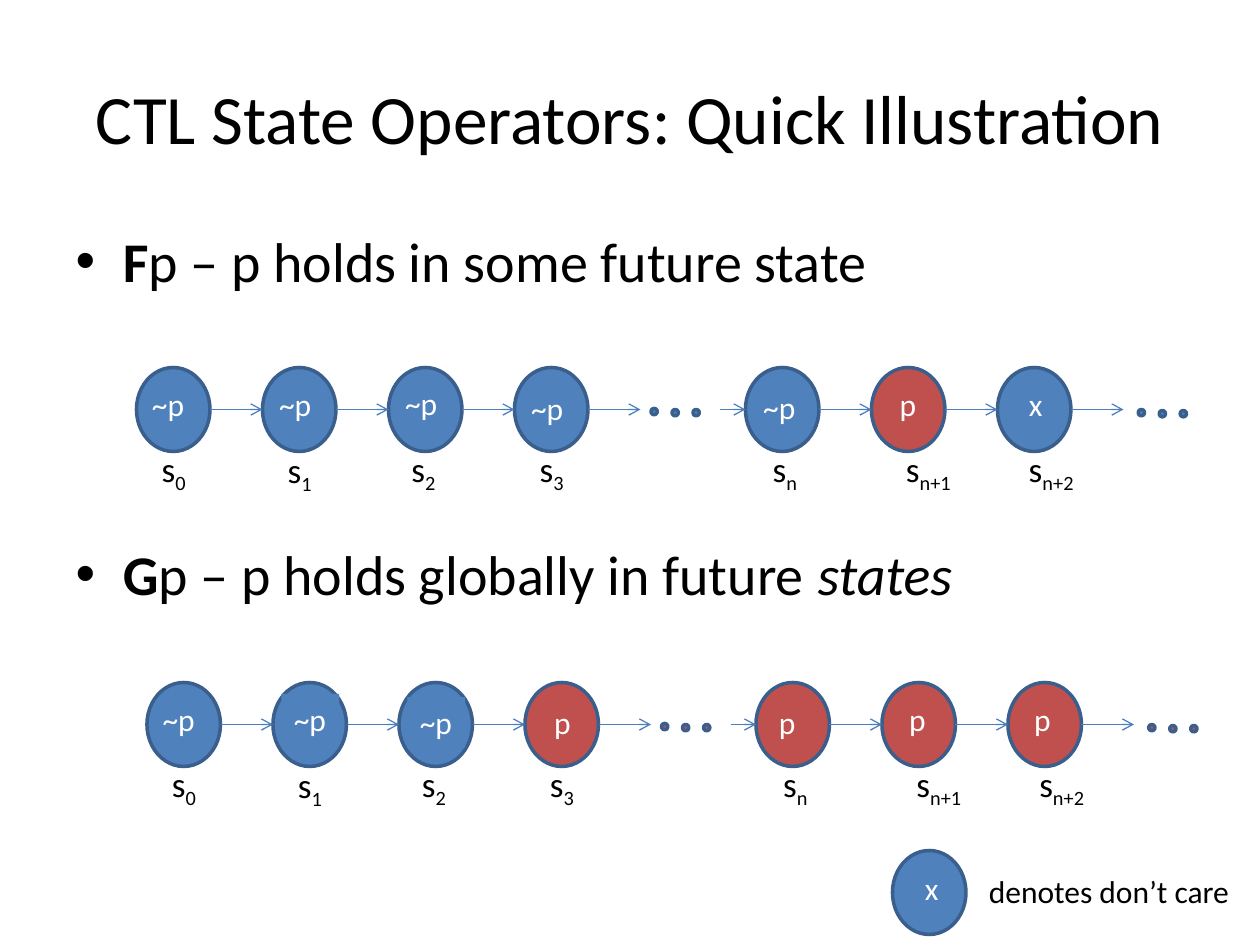
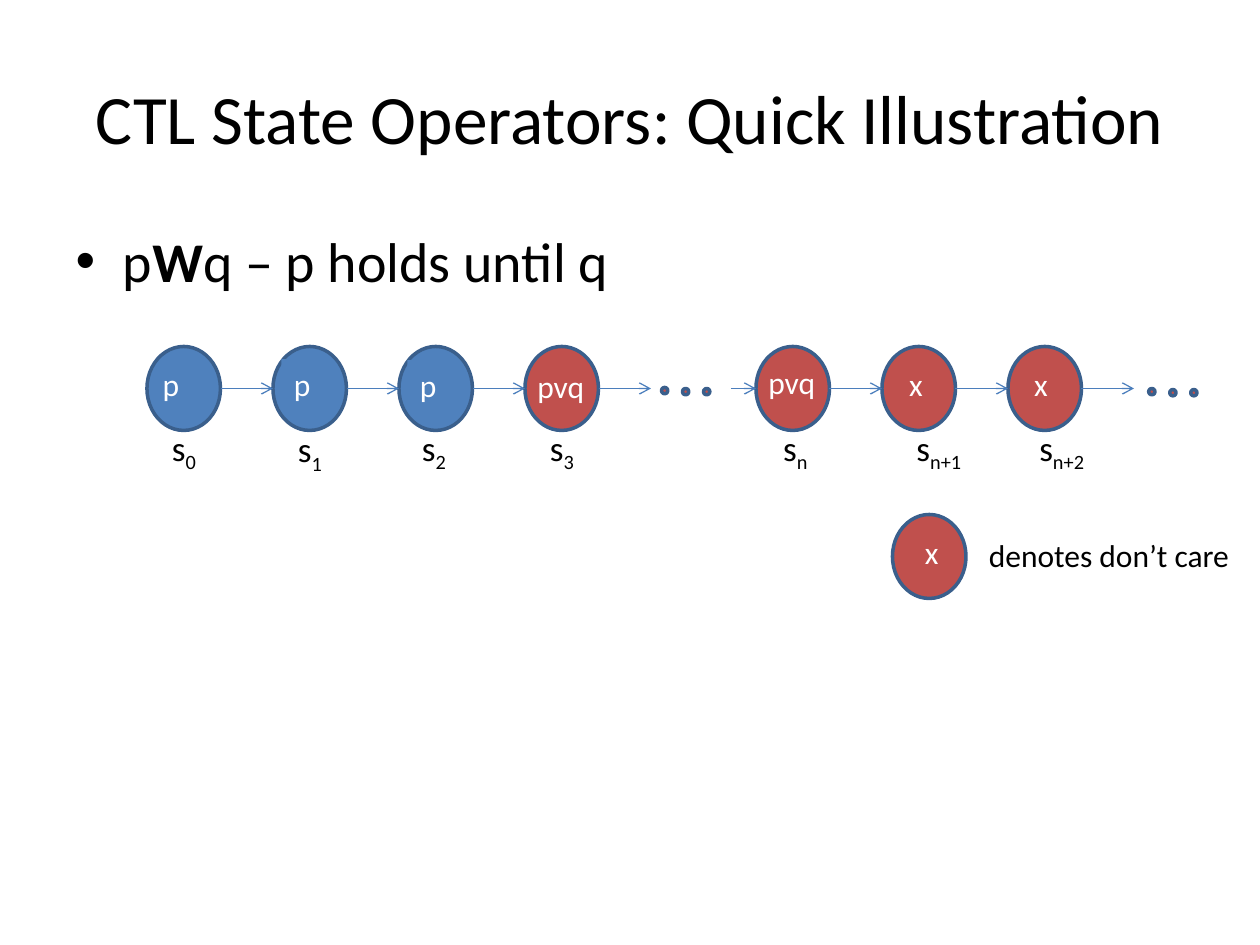
from lxml import etree
from pptx import Presentation
from pptx.dml.color import RGBColor
from pptx.enum.shapes import MSO_CONNECTOR, MSO_SHAPE
from pptx.enum.text import MSO_ANCHOR, MSO_AUTO_SIZE, PP_ALIGN
from pptx.oxml.ns import qn
from pptx.util import Pt

PX = 7620  # EMU; 120 px to the inch
BLUE = RGBColor(0x4F, 0x81, 0xBD)
RED = RGBColor(0xC0, 0x50, 0x4D)
OUTLINE = RGBColor(0x3A, 0x5F, 0x8C)
ARROW = RGBColor(0x4B, 0x7E, 0xBC)
BLACK = RGBColor(0, 0, 0)
WHITE = RGBColor(0xFF, 0xFF, 0xFF)
FONT = "Calibri"
TITLE = "CTL State Operators: Quick Illustration"

NODE_W, NODE_H, DOT = 70, 80, 6
TEXT_W = {"~p": 55, "p": 40, "x": 37, "pvq": 70}
# Horizontal positions are counted from the left edge of a row
NODE_X = [0, 120, 240, 360, 580, 700, 820]
ARROWS = [(70, 120), (190, 240), (310, 360), (430, 480),
          (556, 580), (650, 700), (770, 820), (890, 940)]
DOTS = [(490, 39), (510, 40), (530, 40), (954, 40), (974, 41), (994, 41)]
# Subscript, shift from the node's left edge, shift from the row's top, width
STATES = [("0", 12, 70, 49), ("1", 12, 71, 49), ("2", 10, 70, 49),
          ("3", 12, 70, 49), ("n", 14, 70, 49),
          ("n+1", 21, 70, 72), ("n+2", 18, 70, 72)]

# Each node: text, fill, fill behind the text, shift of the text in the node
F_NODES = [("~p", BLUE, None, 3, 11), ("~p", BLUE, None, 4, 11),
           ("~p", BLUE, None, 4, 10), ("~p", BLUE, None, 4, 15),
           ("~p", BLUE, None, 5, 14), ("p", RED, None, 15, 11),
           ("x", BLUE, None, 18, 11)]
G_NODES = [("~p", BLUE, None, 3, 11), ("~p", BLUE, BLUE, 8, 11),
           ("~p", BLUE, BLUE, 8, 14), ("p", RED, RED, 16, 14),
           ("p", RED, RED, 10, 14), ("p", RED, RED, 14, 11),
           ("p", RED, RED, 13, 11)]
W_NODES = [("p", BLUE, None, 3, 12), ("p", BLUE, BLUE, 8, 12),
           ("p", BLUE, BLUE, 8, 13), ("pvq", RED, None, 0, 14),
           ("pvq", RED, None, 0, 10), ("x", RED, RED, 14, 12),
           ("x", RED, RED, 13, 12)]

# Bullets: space before, then runs of text, bold, italic
# Rows: left, top, dot colour, nodes
SLIDES = [
    {"bullets": [
        (None, [("F", True, False),
                ("p – p holds in some future state", False, False)]),
        (Pt(140), [("G", True, False),
                   ("p – p holds globally in future ", False, False),
                   ("states", False, True)])],
     "rows": [(130, 350, BLUE, F_NODES), (140, 650, RED, G_NODES)],
     "legend": (810, BLUE)},
    {"bullets": [
        (None, [("p", False, False), ("W", True, False),
                ("q – p holds until q", False, False)])],
     "rows": [(140, 330, RED, W_NODES)],
     "legend": (490, RED)},
]


def add_ellipse(s, x, y, w, h, fill):
    sp = s.shapes.add_shape(MSO_SHAPE.OVAL, x * PX, y * PX, w * PX, h * PX)
    sp.shadow.inherit = False
    sp.fill.solid()
    sp.fill.fore_color.rgb = fill
    sp.line.color.rgb = OUTLINE
    sp.line.width = Pt(2)


def add_label(s, x, y, w, h, text, size, color, subscript="", fill=None):
    sp = s.shapes.add_textbox(x * PX, y * PX, w * PX, h * PX)
    if fill is not None:
        sp.fill.solid()
        sp.fill.fore_color.rgb = fill
    tf = sp.text_frame
    tf.word_wrap = False
    tf.auto_size = MSO_AUTO_SIZE.SHAPE_TO_FIT_TEXT
    for part, baseline in ((text, None), (subscript, "-25000")):
        if part:
            r = tf.paragraphs[0].add_run()
            r.text = part
            r.font.name, r.font.size = FONT, Pt(size)
            r.font.color.rgb = color
            if baseline:
                r.font._element.set("baseline", baseline)


prs = Presentation()
prs.slide_width, prs.slide_height = 1200 * PX, 900 * PX

for content in SLIDES:
    s = prs.slides.add_slide(prs.slide_layouts[1])

    title, body = s.shapes.title, s.placeholders[1]
    for sp, top, height in ((title, 36, 150), (body, 210, 594)):
        sp.left, sp.top = 60 * PX, top * PX
        sp.width, sp.height = 1080 * PX, height * PX
        sp.text_frame.auto_size = MSO_AUTO_SIZE.NONE

    title.text_frame.vertical_anchor = MSO_ANCHOR.MIDDLE
    p = title.text_frame.paragraphs[0]
    p.alignment = PP_ALIGN.CENTER
    r = p.add_run()
    r.text = TITLE
    r.font.name, r.font.size = FONT, Pt(39.6)
    r.font.color.rgb = BLACK

    tf = body.text_frame
    for i, (space, runs) in enumerate(content["bullets"]):
        p = tf.add_paragraph() if i else tf.paragraphs[0]
        if space:
            p.space_before = space
        for text, bold, italic in runs:
            r = p.add_run()
            r.text = text
            r.font.name, r.font.size = FONT, Pt(32)
            r.font.bold, r.font.italic = bold, italic
            r.font.color.rgb = BLACK

    for left, top, dot_fill, nodes in content["rows"]:
        for x, node, state in zip(NODE_X, nodes, STATES):
            text, fill, backing, dx, dy = node
            add_ellipse(s, left + x, top, NODE_W, NODE_H, fill)
            add_label(s, left + x + dx, top + dy, TEXT_W[text], 48,
                      text, 18, WHITE, fill=backing)
            subscript, dx, dy, width = state
            add_label(s, left + x + dx, top + dy, width, 53,
                      "s", 20, BLACK, subscript)
        for start, end in ARROWS:
            y = (top + NODE_H // 2) * PX
            line = s.shapes.add_connector(MSO_CONNECTOR.STRAIGHT,
                                          (left + start) * PX, y,
                                          (left + end) * PX, y)
            line.line.color.rgb = ARROW
            line.line.width = Pt(0.75)
            etree.SubElement(line.line._get_or_add_ln(),
                             qn("a:tailEnd"), type="arrow")
            etree.SubElement(line._element.spPr, qn("a:effectLst"))
        for x, dy in DOTS:
            add_ellipse(s, left + x, top + dy, DOT, DOT, dot_fill)

    top, fill = content["legend"]
    add_ellipse(s, 850, top, NODE_W, NODE_H, fill)
    add_label(s, 869, top + 12, TEXT_W["x"], 48, "x", 18, WHITE, fill=fill)
    add_label(s, 930, top + 15, 256, 48, "denotes don’t care", 18, BLACK)

prs.save("out.pptx")
